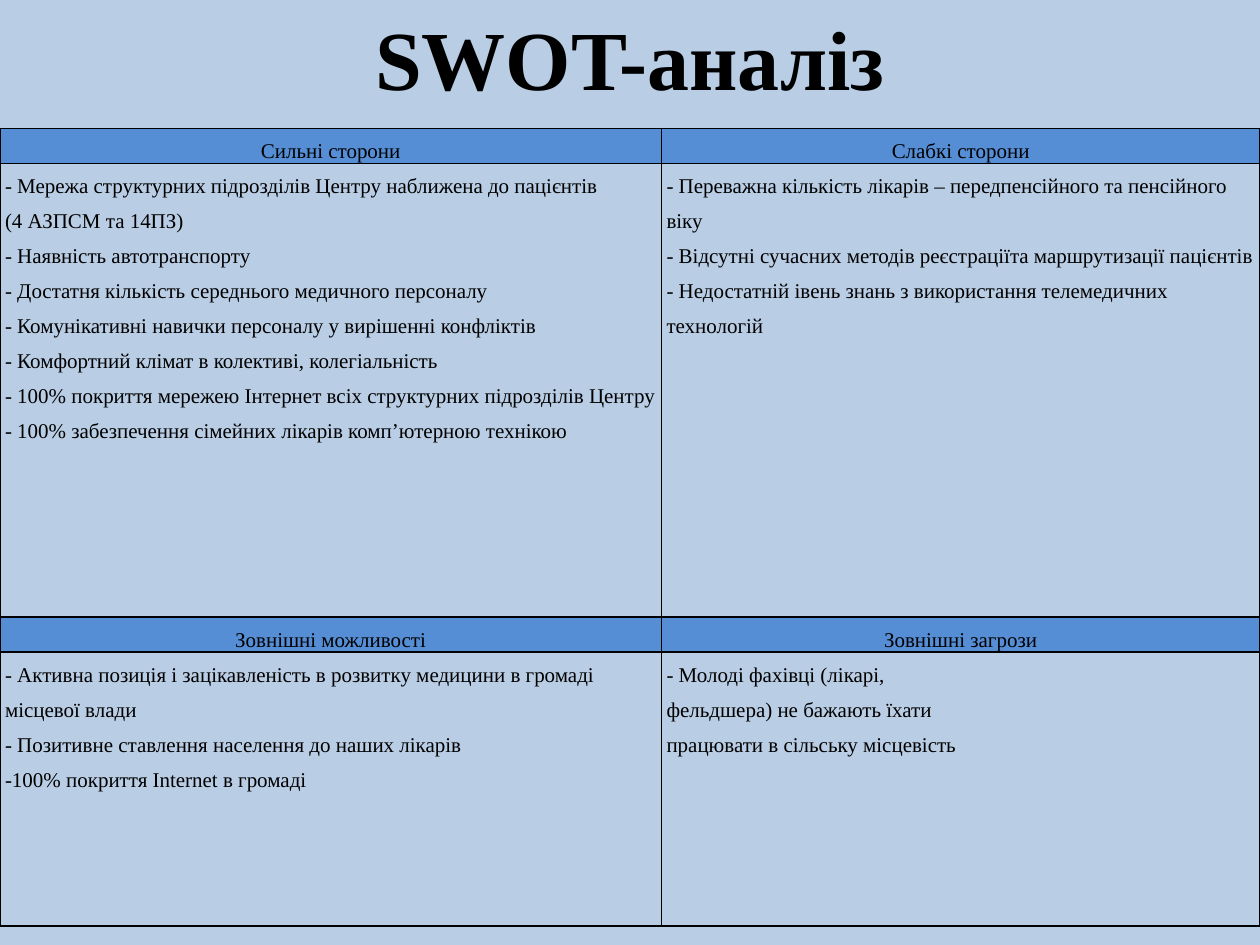
from dataclasses import dataclass

from lxml.etree import SubElement
from pptx import Presentation
from pptx.dml.color import RGBColor
from pptx.enum.text import MSO_ANCHOR, PP_ALIGN
from pptx.oxml.ns import qn
from pptx.slide import Slide
from pptx.table import Table, _Cell
from pptx.text.text import _Paragraph
from pptx.util import Inches, Pt

COLORS = {"background": "B9CDE5", "header": "558ED5", "ink": "000000"}
FONT = "Times New Roman"
SLIDE_WIDTH, SLIDE_HEIGHT = Inches(10), Inches(7.5)
COLUMN_SHARES = (0.525, 0.475)
HEADER_SHARE = 0.032
TABLE_TOP_SHARE = 0.136
TITLE_SHARE = 0.16


@dataclass(frozen=True)
class Quadrant:
    heading: str
    points: tuple[str, ...]


@dataclass(frozen=True)
class Band:
    body_share: float
    quadrants: tuple[Quadrant, Quadrant]


BANDS = (
    Band(0.48, (
        Quadrant("Сильні сторони", (
            "- Мережа структурних підрозділів Центру наближена до пацієнтів",
            "(4 АЗПСМ та 14ПЗ)",
            "- Наявність автотранспорту",
            "- Достатня кількість середнього медичного персоналу",
            "- Комунікативні навички персоналу у вирішенні конфліктів",
            "- Комфортний клімат в колективі, колегіальність",
            "- 100% покриття мережею Інтернет всіх структурних підрозділів Центру",
            "- 100% забезпечення сімейних лікарів комп’ютерною технікою",
        )),
        Quadrant("Слабкі сторони", (
            "- Переважна кількість лікарів – передпенсійного та пенсійного віку",
            "- Відсутні сучасних методів реєстраціїта маршрутизації пацієнтів",
            "- Недостатній івень знань з використання телемедичних технологій",
        )),
    )),
    Band(0.29, (
        Quadrant("Зовнішні можливості", (
            "- Активна позиція і зацікавленість в розвитку медицини в громаді місцевої влади",
            "- Позитивне ставлення населення до наших лікарів",
            "-100% покриття Internet в громаді",
        )),
        Quadrant("Зовнішні загрози", (
            "- Молоді фахівці (лікарі,",
            "фельдшера) не бажають їхати",
            "працювати в сільську місцевість",
        )),
    )),
)


def color(name: str) -> RGBColor:
    return RGBColor.from_string(COLORS[name])


def add_run(paragraph: _Paragraph, text: str, size: float, bold: bool = False) -> None:
    run = paragraph.add_run()
    run.text = text
    run.font.name = FONT
    run.font.size = Pt(size)
    run.font.bold = bold
    run.font.color.rgb = color("ink")


def add_borders(cell: _Cell) -> None:
    properties = cell._tc.get_or_add_tcPr()
    for index, side in enumerate(("lnL", "lnR", "lnT", "lnB")):
        line = SubElement(properties, qn(f"a:{side}"), w=str(Pt(1)))
        fill = SubElement(line, qn("a:solidFill"))
        SubElement(fill, qn("a:srgbClr"), val=COLORS["ink"])
        properties.insert(index, line)


def fill_cell(cell: _Cell, lines: tuple[str, ...], is_header: bool) -> None:
    cell.margin_left = cell.margin_right = Inches(0.04)
    cell.margin_top = cell.margin_bottom = 0
    if is_header:
        cell.fill.solid()
        cell.fill.fore_color.rgb = color("header")
    else:
        cell.fill.background()
    add_borders(cell)
    frame = cell.text_frame
    for index, text in enumerate(lines):
        paragraph = frame.add_paragraph() if index else frame.paragraphs[0]
        paragraph.alignment = PP_ALIGN.CENTER if is_header else PP_ALIGN.LEFT
        paragraph.line_spacing = 1.5
        add_run(paragraph, text, 12)


def fill_band(table: Table, first_row: int, band: Band) -> None:
    for offset, share in enumerate((HEADER_SHARE, band.body_share)):
        table.rows[first_row + offset].height = int(SLIDE_HEIGHT * share)
    for column, quadrant in enumerate(band.quadrants):
        fill_cell(table.cell(first_row, column), (quadrant.heading,), True)
        fill_cell(table.cell(first_row + 1, column), quadrant.points, False)


def add_swot_table(slide: Slide) -> None:
    height = sum(HEADER_SHARE + band.body_share for band in BANDS)
    table = slide.shapes.add_table(
        2 * len(BANDS), len(COLUMN_SHARES),
        0, int(SLIDE_HEIGHT * TABLE_TOP_SHARE),
        SLIDE_WIDTH, int(SLIDE_HEIGHT * height),
    ).table
    table.first_row = table.horz_banding = False
    for column, share in zip(table.columns, COLUMN_SHARES):
        column.width = int(SLIDE_WIDTH * share)
    for index, band in enumerate(BANDS):
        fill_band(table, 2 * index, band)


def format_title(slide: Slide, text: str) -> None:
    title = slide.shapes.title
    title.left = title.top = 0
    title.width, title.height = SLIDE_WIDTH, int(SLIDE_HEIGHT * TITLE_SHARE)
    frame = title.text_frame
    frame.word_wrap = True
    frame.vertical_anchor = MSO_ANCHOR.MIDDLE
    frame.margin_top, frame.margin_bottom = Inches(0.05), Inches(0.34)
    paragraph = frame.paragraphs[0]
    paragraph.alignment = PP_ALIGN.CENTER
    add_run(paragraph, text, 48, bold=True)


def main() -> None:
    presentation = Presentation()
    presentation.slide_width, presentation.slide_height = SLIDE_WIDTH, SLIDE_HEIGHT
    slide = presentation.slides.add_slide(presentation.slide_layouts[5])
    slide.background.fill.solid()
    slide.background.fill.fore_color.rgb = color("background")
    add_swot_table(slide)
    format_title(slide, "SWOT-аналіз")
    presentation.save("out.pptx")


if __name__ == "__main__":
    main()
